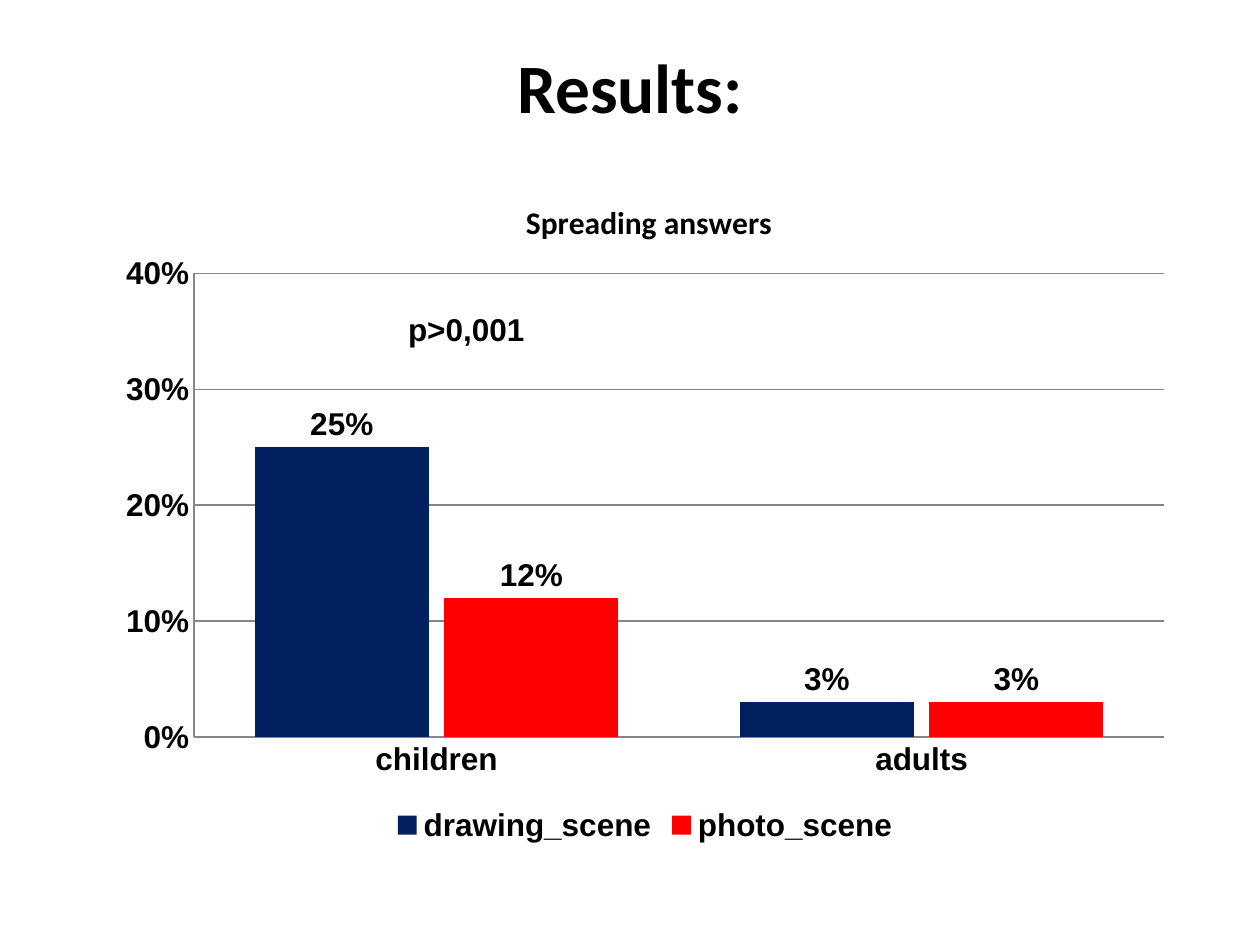
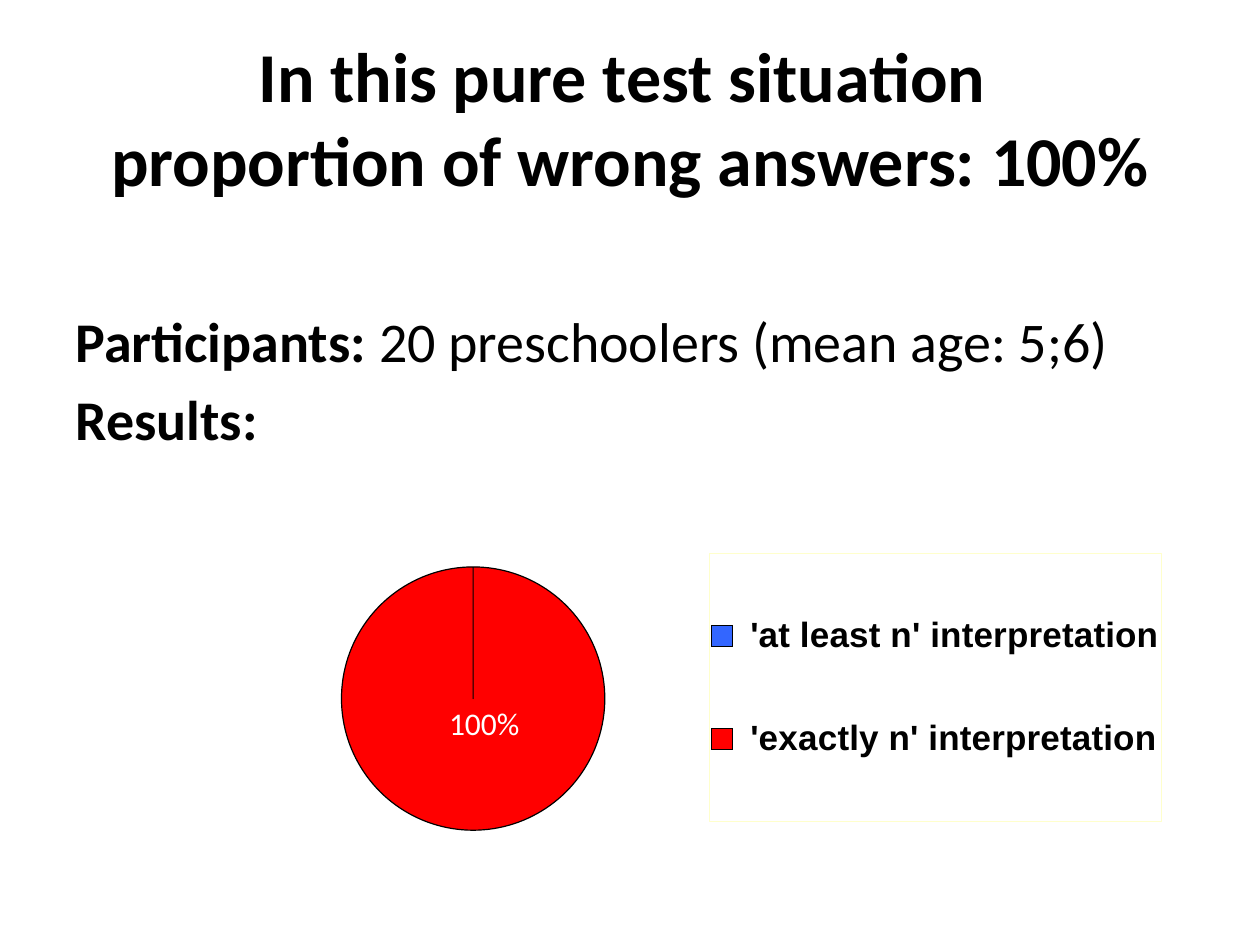
"""Build two slides of results with a column chart and a pie chart."""
from dataclasses import dataclass
from typing import Any

import pptx
import pptx.chart.data
import pptx.dml.color
import pptx.enum.chart
import pptx.enum.text
import pptx.oxml
import pptx.oxml.ns
import pptx.util

Inches = pptx.util.Inches
Pt = pptx.util.Pt
Place = pptx.enum.chart.XL_LABEL_POSITION
Side = pptx.enum.chart.XL_LEGEND_POSITION
Kind = pptx.enum.chart.XL_CHART_TYPE
Align = pptx.enum.text.PP_ALIGN
Anchor = pptx.enum.text.MSO_ANCHOR

BLACK, WHITE, RED = "000000", "FFFFFF", "FF0000"
NAVY, BLUE, GREY, CREAM = "002060", "3366FF", "868686", "FFFFCC"
HEAD, LABEL = "Calibri", "Arial"


@dataclass(frozen=True)
class Box:
    """A place on the slide, in inches."""
    left: float
    top: float
    width: float
    height: float

    def spot(self) -> tuple:
        """Return the four lengths."""
        return tuple(Inches(n) for n in (self.left, self.top, self.width, self.height))

    def share(self, outer: "Box") -> dict[str, float]:
        """Return this box as parts of an outer one."""
        return {"x": (self.left - outer.left) / outer.width,
                "y": (self.top - outer.top) / outer.height,
                "w": self.width / outer.width,
                "h": self.height / outer.height}


@dataclass(frozen=True)
class Row:
    """A named set of chart values with its colour."""
    name: str
    vals: tuple[float, ...]
    color: str = ""


def tint(code: str) -> pptx.dml.color.RGBColor:
    """Turn a hex string into a colour."""
    return pptx.dml.color.RGBColor.from_string(code)


def style(font: Any, size: float = 18, bold: bool = True,
          face: str = LABEL, color: str = BLACK) -> None:
    """Set the look of a font."""
    font.size, font.bold, font.name = Pt(size), bold, face
    font.color.rgb = tint(color)


def paint(item: Any, color: str) -> None:
    """Fill a chart part with one colour."""
    item.format.fill.solid()
    item.format.fill.fore_color.rgb = tint(color)


def stroke(line: Any, color: str, width: float = 0.75) -> None:
    """Set the look of a line."""
    line.color.rgb = tint(color)
    line.width = Pt(width)


def write(para: Any, text: str, **look: Any) -> None:
    """Add text to a paragraph, with a line break at each newline."""
    for num, part in enumerate(text.split("\n")):
        if num:
            para.add_line_break()
        run = para.add_run()
        run.text = part
        style(run.font, **look)


def frame(slide: Any, box: Box, wrap: bool = True) -> Any:
    """Add a text box and return its text frame."""
    text = slide.shapes.add_textbox(*box.spot()).text_frame
    text.word_wrap = wrap
    return text


def title(slide: Any, text: str, height: float, size: float) -> None:
    """Add the slide title."""
    area = frame(slide, Box(0.5, 0.3, 9, height))
    area.vertical_anchor = Anchor.MIDDLE
    area.paragraphs[0].alignment = Align.CENTER
    write(area.paragraphs[0], text, size=size, face=HEAD)


def place(node: Any, index: int, parts: dict[str, float], edge: bool = True,
          inner: bool = False) -> None:
    """Give a chart part a manual layout."""
    for old in node.findall(pptx.oxml.ns.qn("c:layout")):
        node.remove(old)
    tags = '<c:layoutTarget val="inner"/>' if inner else ""
    if edge:
        tags += '<c:xMode val="edge"/><c:yMode val="edge"/>'
    tags += "".join(f'<c:{key} val="{val:.4f}"/>' for key, val in parts.items())
    node.insert(index, pptx.oxml.parse_xml(
        f'<c:layout {pptx.oxml.ns.nsdecls("c")}><c:manualLayout>{tags}'
        '</c:manualLayout></c:layout>'))


def graph(slide: Any, kind: Any, box: Box, plot: Box, cats: tuple[str, ...],
          rows: list[Row], side: Any, size: float) -> Any:
    """Add a chart with a legend and a fixed plot area."""
    data = pptx.chart.data.CategoryChartData(number_format="0%")
    data.categories = cats
    for row in rows:
        data.add_series(row.name, row.vals)
    chart = slide.shapes.add_chart(kind, *box.spot(), data).chart
    style(chart.font, size=10, bold=False, face=HEAD)
    chart.has_title = False
    chart.has_legend = True
    chart.legend.position = side
    chart.legend.include_in_layout = False
    style(chart.legend.font, size=size)
    place(chart._chartSpace.chart.plotArea, 0, plot.share(box), inner=True)
    return chart


def bars(slide: Any) -> None:
    """Draw the column chart of spreading answers."""
    box = Box(0.83, 1.31, 8.58, 5.43)
    rows = [Row("drawing_scene", (0.25, 0.03), NAVY),
            Row("photo_scene", (0.12, 0.03), RED)]
    chart = graph(slide, Kind.COLUMN_CLUSTERED, box, Box(1.54, 2.17, 7.7, 3.68),
                  ("children", "adults"), rows, Side.BOTTOM, 18)
    write(chart.chart_title.text_frame.paragraphs[0], "Spreading answers", face=HEAD)
    chart.chart_title.include_in_layout = False
    parts = Box(4.13, 1.55, 2, 0.3).share(box)
    place(chart.chart_title._element, 1, {key: parts[key] for key in "xy"})
    plot = chart.plots[0]
    plot.gap_width, plot.overlap, plot.vary_by_categories = 70, -9, False
    for row, series in zip(rows, plot.series):
        paint(series, row.color)
        tags = series.data_labels
        tags.show_value = True
        tags.number_format, tags.number_format_is_linked = "0%", False
        tags.position = Place.OUTSIDE_END
        style(tags.font)
    for axis in (chart.category_axis, chart.value_axis):
        axis.major_tick_mark = pptx.enum.chart.XL_TICK_MARK.NONE
        style(axis.tick_labels.font)
        stroke(axis.format.line, GREY)
    axis = chart.value_axis
    axis.minimum_scale, axis.maximum_scale, axis.major_unit = 0, 0.4, 0.1
    axis.tick_labels.number_format = "0%"
    axis.tick_labels.number_format_is_linked = False
    stroke(axis.major_gridlines.format.line, GREY)


def pie(slide: Any) -> None:
    """Draw the pie chart of wrong answers."""
    box = Box(0.67, 3.99, 8.82, 3.15)
    cats = (" 'at least n' interpretation", " 'exactly n' interpretation")
    chart = graph(slide, Kind.PIE, box, Box(1.19, 4.5, 5.13, 2.09), cats,
                  [Row("Series 1", (0, 100))], Side.RIGHT, 20)
    key = chart.legend._element
    place(key, 1, Box(5.63, 4.39, 3.59, 2.13).share(box))
    key.find(pptx.oxml.ns.qn("c:txPr")).addprevious(pptx.oxml.parse_xml(
        f'<c:spPr {pptx.oxml.ns.nsdecls("c", "a")}><a:ln w="9525"><a:solidFill>'
        f'<a:srgbClr val="{CREAM}"/></a:solidFill></a:ln></c:spPr>'))
    series = chart.plots[0].series[0]
    for num, color in enumerate((BLUE, RED)):
        paint(series.points[num], color)
        stroke(series.points[num].format.line, BLACK, 0.69)
    series.data_labels.show_value = False
    label = series.points[1].data_label
    style(label.font, bold=False, face=HEAD, color=WHITE)
    label.position = Place.CENTER
    node = series._element.xpath(".//c:dLbl")[0]
    node.find(pptx.oxml.ns.qn("c:showVal")).set("val", "0")
    node.find(pptx.oxml.ns.qn("c:showPercent")).set("val", "1")
    place(node, 1, {"x": 0.01, "y": -0.1}, edge=False)


def facts(slide: Any) -> None:
    """Write the lines on participants and results."""
    area = frame(slide, Box(0.5, 1.75, 9, 5.46))
    area.margin_top = Inches(0.68)
    lines = (("Participants: ", "20 preschoolers (mean age: 5;6)"), ("Results:", ""))
    for num, (lead, rest) in enumerate(lines):
        para = area.add_paragraph() if num else area.paragraphs[0]
        para.space_before = Pt(6.4 * num)
        write(para, lead, size=32, face=HEAD)
        if rest:
            write(para, rest, size=32, face=HEAD, bold=False)


def main() -> None:
    """Build and save the slides."""
    deck = pptx.Presentation()
    deck.slide_width, deck.slide_height = Inches(10), Inches(7.5)
    first, second = (deck.slides.add_slide(deck.slide_layouts[6]) for _ in range(2))
    title(first, "Results:", 0.77, 39.6)
    bars(first)
    note = frame(first, Box(3.14, 2.41, 1.13, 0.4), wrap=False)
    write(note.paragraphs[0], "p>0,001")
    title(second, "In this pure test situation \nproportion of wrong answers: 100%", 1.25, 40)
    facts(second)
    pie(second)
    deck.save("out.pptx")


if __name__ == "__main__":
    main()
